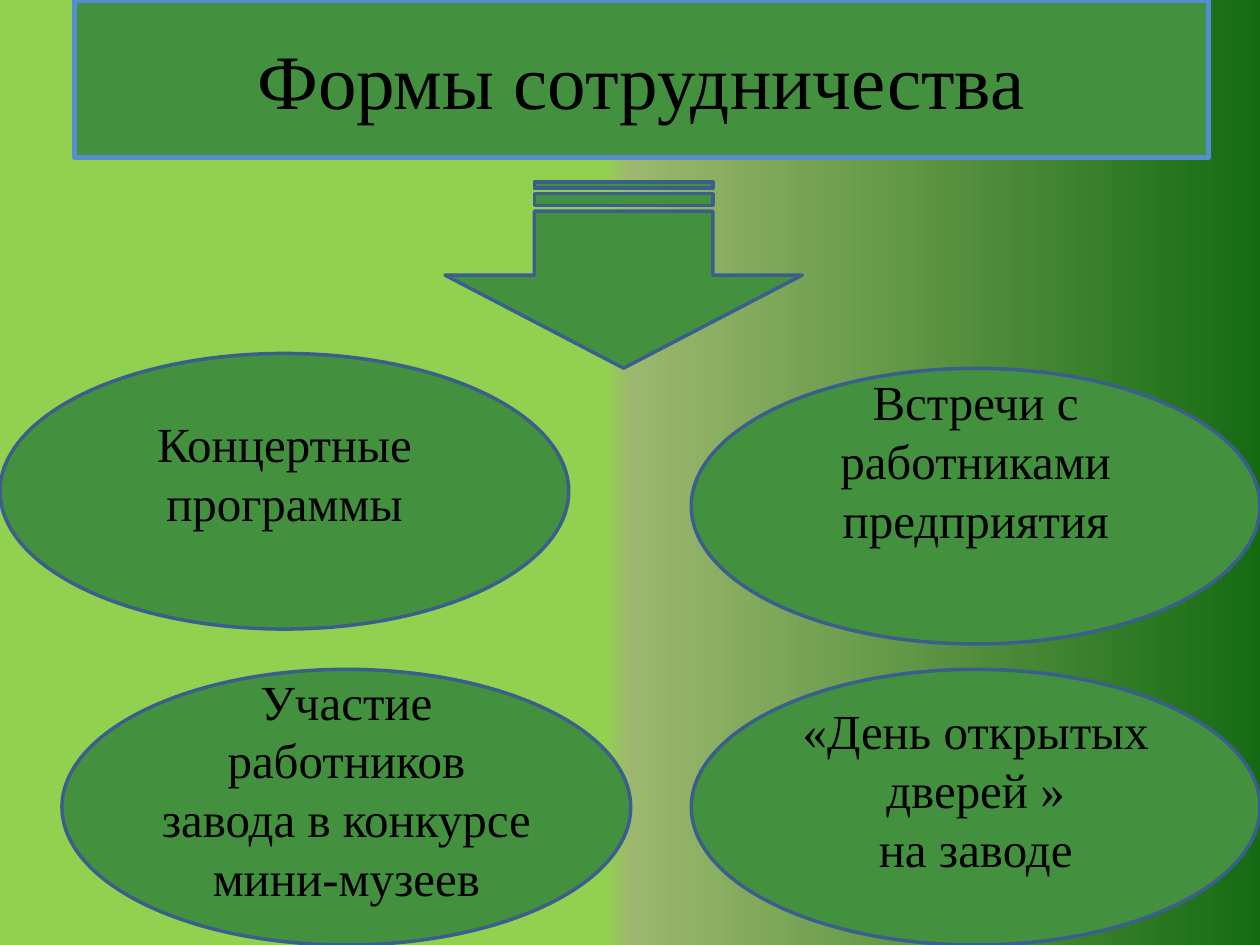
from copy import deepcopy
from dataclasses import dataclass

from pptx import Presentation
from pptx import util as u
from pptx.dml.color import RGBColor
from pptx.enum import shapes, text


@dataclass(frozen=True)
class Theme:
    font: str = "Times New Roman"
    title_size: float = 44
    body_size: float = 28
    ink: str = "000000"
    fill: str = "43913F"
    title_line: str = "558ED5"
    line: str = "3A5F8C"
    background: tuple = ((48, "92D050"), (50, "9CB86E"), (100, "156B13"))


@dataclass(frozen=True)
class Box:
    left: float
    top: float
    width: float
    height: float


@dataclass(frozen=True)
class Form:
    left: float
    top: float
    lines: tuple[str, ...]
    lift: float = 21


THEME = Theme()
SLIDE_W, SLIDE_H = 720, 540
OVAL_W, OVAL_H = 325, 157.5
RIGHT = SLIDE_W - OVAL_W
BOTTOM = SLIDE_H - OVAL_H
INSET = 3.6

TITLE = Box(42.5, 0, 648, 90)
ARROW = Box(303.2, 55.2, 106.3, 204.1)
FORMS = (
    Form(0, 202, ("Концертные программы",)),
    Form(RIGHT, 210.5, ("Встречи с работниками предприятия",), 53),
    Form(35.4, BOTTOM, ("Участие работников завода в конкурсе мини-музеев",)),
    Form(RIGHT, BOTTOM, ("«День открытых дверей »", "на заводе")),
)


def paint_background(s) -> None:
    fill = s.background.fill
    fill.gradient()
    fill.gradient_angle = 0
    first = fill.gradient_stops[0]._gs
    first.getparent().append(deepcopy(first))
    for stop, (position, color) in zip(fill.gradient_stops, THEME.background):
        stop.position = position / 100
        stop.color.rgb = RGBColor.from_string(color)


def add_shape(s, kind, box: Box, line: str, weight: float):
    sp = s.shapes.add_shape(
        kind, u.Pt(box.left), u.Pt(box.top), u.Pt(box.width), u.Pt(box.height))
    sp.shadow.inherit = False
    sp.fill.solid()
    sp.fill.fore_color.rgb = RGBColor.from_string(THEME.fill)
    sp.line.color.rgb = RGBColor.from_string(line)
    sp.line.width = u.Pt(weight)
    return sp


def write(sp, lines: tuple[str, ...], size: float, lift: float = 0) -> None:
    tf = sp.text_frame
    tf.text = "\n".join(lines)
    tf.word_wrap = True
    tf.vertical_anchor = text.MSO_ANCHOR.MIDDLE
    tf.margin_bottom = u.Pt(INSET + lift)
    for p in tf.paragraphs:
        p.alignment = text.PP_ALIGN.CENTER
        for r in p.runs:
            r.font.name = THEME.font
            r.font.size = u.Pt(size)
            r.font.color.rgb = RGBColor.from_string(THEME.ink)


def main() -> None:
    prs = Presentation()
    prs.slide_width, prs.slide_height = u.Pt(SLIDE_W), u.Pt(SLIDE_H)
    s = prs.slides.add_slide(prs.slide_layouts[6])
    paint_background(s)

    kinds = shapes.MSO_SHAPE
    title = add_shape(s, kinds.RECTANGLE, TITLE, THEME.title_line, 3)
    write(title, ("Формы сотрудничества",), THEME.title_size)

    arrow = add_shape(s, kinds.STRIPED_RIGHT_ARROW, ARROW, THEME.line, 2)
    arrow.rotation = 90

    for form in FORMS:
        box = Box(form.left, form.top, OVAL_W, OVAL_H)
        oval = add_shape(s, kinds.OVAL, box, THEME.line, 2)
        write(oval, form.lines, THEME.body_size, form.lift)

    prs.save("out.pptx")


if __name__ == "__main__":
    main()
